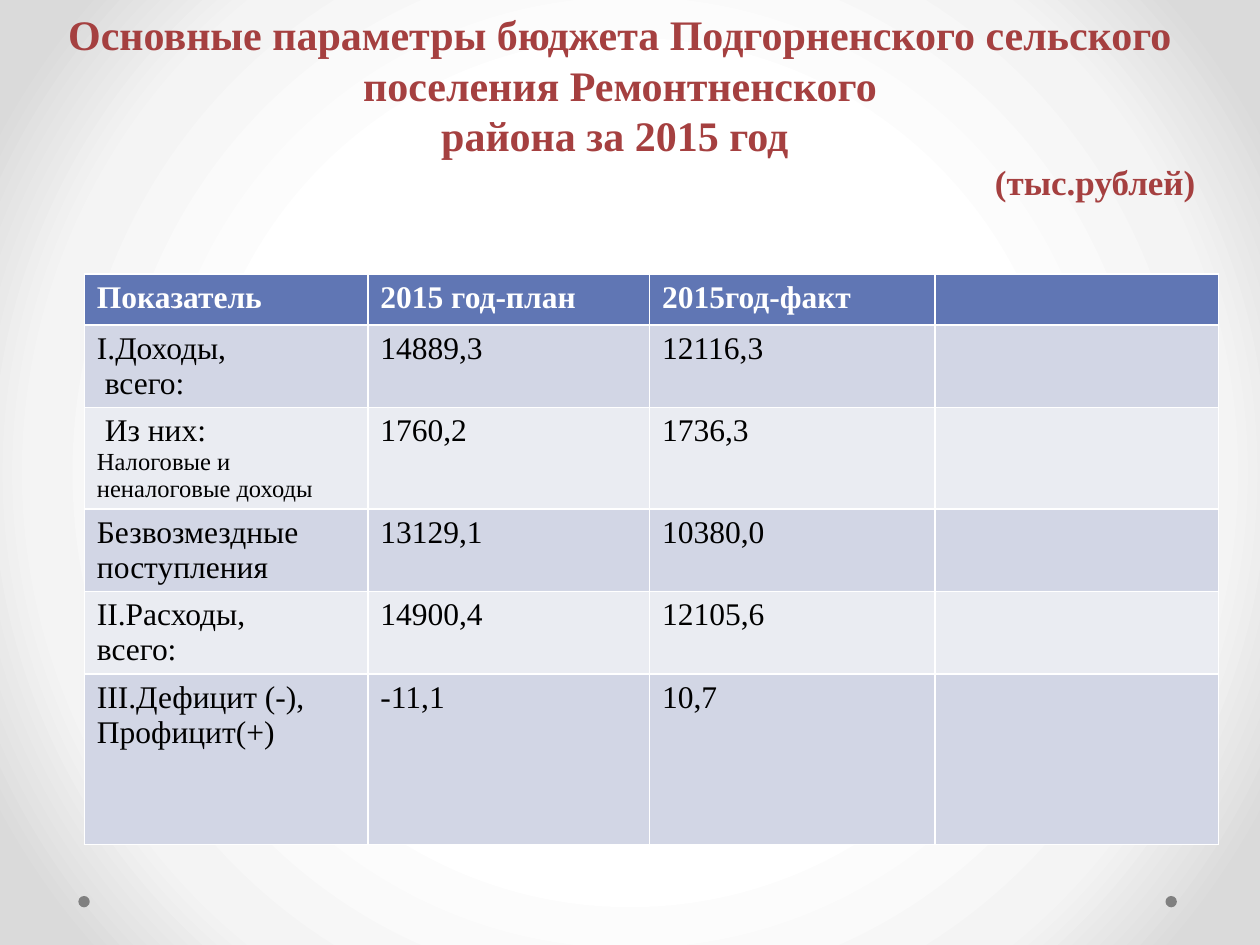
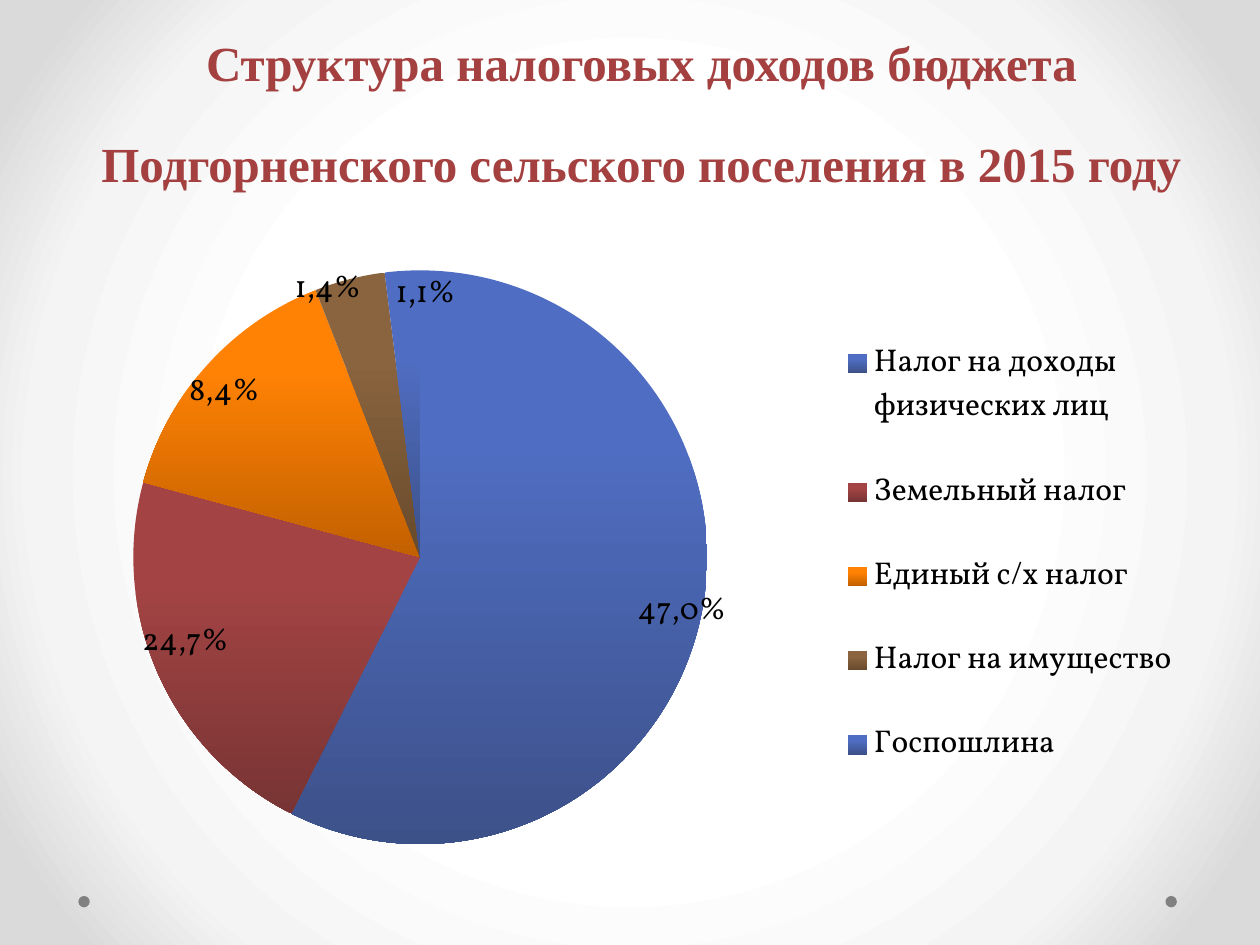
"""Build two slides on the 2015 budget: a parameter table and a tax revenue pie."""
from pptx import Presentation
from pptx.chart.data import CategoryChartData
from pptx.dml.color import RGBColor
from pptx.enum.chart import XL_CHART_TYPE, XL_LABEL_POSITION, XL_LEGEND_POSITION
from pptx.enum.shapes import MSO_SHAPE
from pptx.enum.text import MSO_ANCHOR, MSO_AUTO_SIZE, PP_ALIGN
from pptx.oxml import parse_xml
from pptx.oxml.ns import nsdecls, qn
from pptx.util import Pt

TITLE_FONT, CHART_FONT = "Times New Roman", "Vollkorn"
WHITE, BLACK, RED, GREY = "FFFFFF", "000000", "A54040", "808080"
HEADER, BAND_DARK, BAND_LIGHT = "6076B4", "D2D6E5", "EAECF2"
BACKGROUND_STOPS = [(50, "FFFFFF"), (76, "F4F4F4"), (92, "DADADA")]


def colour(value):
    return RGBColor.from_string(value)


def format_runs(para, size, value, bold=False, font=TITLE_FONT):
    for span in para.runs:
        span.font.name = font
        span.font.size = Pt(size)
        span.font.bold = bold
        span.font.color.rgb = colour(value)


deck = Presentation()
deck.slide_width, deck.slide_height = Pt(720), Pt(540)

master = deck.slide_master
master.background.fill.gradient()
linear = master.element.find(".//" + qn("a:gradFill"))
stops = "".join(
    f'<a:gs pos="{position * 1000}"><a:srgbClr val="{value}"/></a:gs>'
    for position, value in BACKGROUND_STOPS
)
radial = parse_xml(
    f'<a:gradFill {nsdecls("a")} rotWithShape="1"><a:gsLst>{stops}</a:gsLst>'
    '<a:path path="circle"><a:fillToRect l="50000" t="50000" r="50000" b="50000"/>'
    "</a:path></a:gradFill>"
)
linear.getparent().replace(linear, radial)

titles = [
    {
        "text": "Основные параметры бюджета Подгорненского сельского "
                "поселения Ремонтненского\vрайона за 2015 год \n(тыс.рублей)",
        "box": (18.3, 1.5, 672, 119),
        "anchor": MSO_ANCHOR.TOP,
        "lines": [(24, PP_ALIGN.CENTER), (20, PP_ALIGN.RIGHT)],
        "spacing": 1.0,
    },
    {
        "text": "Структура налоговых доходов бюджета "
                "Подгорненского сельского поселения в 2015 году",
        "box": (42.5, 53.2, 648, 60.5),
        "anchor": MSO_ANCHOR.BOTTOM,
        "lines": [(28, PP_ALIGN.CENTER)],
        "spacing": Pt(58),
    },
]
pages = []
for heading in titles:
    page = deck.slides.add_slide(deck.slide_layouts[5])
    pages.append(page)
    for left in (44.8, 666):
        dot = page.shapes.add_shape(MSO_SHAPE.OVAL, Pt(left), Pt(512), Pt(6.5), Pt(6.5))
        dot.shadow.inherit = False
        dot.fill.solid()
        dot.fill.fore_color.rgb = colour(GREY)
        dot.line.fill.background()
    title = page.shapes.title
    title.left, title.top, title.width, title.height = map(Pt, heading["box"])
    frame = title.text_frame
    frame.text = heading["text"]
    frame.auto_size = MSO_AUTO_SIZE.NONE
    frame.word_wrap = True
    frame.vertical_anchor = heading["anchor"]
    for para, (size, alignment) in zip(frame.paragraphs, heading["lines"]):
        para.alignment = alignment
        para.line_spacing = heading["spacing"]
        format_runs(para, size, RED, bold=True)

table_page, chart_page = pages

budget = [
    ("Показатель", "2015 год-план", "2015год-факт", ""),
    ("I.Доходы,\n всего:", "14889,3", "12116,3", ""),
    (" Из них:\nНалоговые и неналоговые доходы", "1760,2", "1736,3", ""),
    ("Безвозмездные поступления", "13129,1", "10380,0", ""),
    ("II.Расходы,\nвсего:", "14900,4", "12105,6", ""),
    ("III.Дефицит (-),\nПрофицит(+)", "-11,1", "10,7", ""),
]
table = table_page.shapes.add_table(
    len(budget), 4, Pt(48.2), Pt(156.5), Pt(648), Pt(245)
).table
for column, width in zip(table.columns, (162, 161, 163, 162)):
    column.width = Pt(width)
for row_number, values in enumerate(budget):
    table.rows[row_number].height = Pt(97.5 if row_number == len(budget) - 1 else 29.2)
    is_header = row_number == 0
    band = HEADER if is_header else BAND_DARK if row_number % 2 else BAND_LIGHT
    for column_number, value in enumerate(values):
        cell = table.cell(row_number, column_number)
        cell.fill.solid()
        cell.fill.fore_color.rgb = colour(band)
        cell.text_frame.text = value
        for para in cell.text_frame.paragraphs:
            size = 14 if para.text.startswith("Налоговые") else 18
            format_runs(para, size, WHITE if is_header else BLACK, bold=is_header)

taxes = [
    ("Налог на доходы физических лиц", 58, "47,0%", "4F6DC2", "3D5189"),
    ("Земельный налог", 22, "24,7%", "A34344", "783434"),
    ("Единый с/х налог", 15, "8,4%", "FF8204", "C26000"),
    ("Налог на имущество", 4, "1,4%", "8A643E", "684B2D"),
    ("Госпошлина", 2, "1,1%", "4F6DC2", "3D5189"),
]
label_shifts = [(0.03, 0.02), (-0.02, -0.01), (-0.02, 0), (-0.05, -0.03), (0.02, -0.01)]
chart_data = CategoryChartData()
chart_data.categories = [tax[0] for tax in taxes]
chart_data.add_series("Series 1", [tax[1] for tax in taxes])
chart = chart_page.shapes.add_chart(
    XL_CHART_TYPE.PIE, Pt(36), Pt(126), Pt(648), Pt(356.4), chart_data
).chart
chart.has_title = False
chart.font.name = CHART_FONT
chart.font.size = Pt(18)
chart.font.color.rgb = colour(BLACK)
chart.has_legend = True
chart.legend.position = XL_LEGEND_POSITION.RIGHT
chart.legend.include_in_layout = False

plot = chart.plots[0]
plot.vary_by_categories = True
for number, (name, share, label_text, top_shade, bottom_shade) in enumerate(taxes):
    point = plot.series[0].points[number]
    fill = point.format.fill
    fill.gradient()
    fill.gradient_angle = 270
    for stop, position, shade in zip(fill.gradient_stops, (0.3, 1), (top_shade, bottom_shade)):
        stop.position = position
        stop.color.rgb = colour(shade)
    label = point.data_label
    label.text_frame.text = label_text
    format_runs(label.text_frame.paragraphs[0], 18, BLACK, font=CHART_FONT)
    label.position = XL_LABEL_POSITION.INSIDE_END

edges = '<c:xMode val="edge"/><c:yMode val="edge"/>'
layouts = [
    (chart.element.find(".//" + qn("c:plotArea")), 0,
     f'<c:layoutTarget val="inner"/>{edges}<c:x val="0.03"/><c:y val="0.08"/>'
     '<c:w val="0.57"/><c:h val="0.92"/>'),
    (chart.element.find(".//" + qn("c:legend")), 1,
     f'{edges}<c:x val="0.68"/><c:y val="0.13"/><c:w val="0.31"/><c:h val="0.81"/>'),
]
for label, (across, down) in zip(chart.element.findall(".//" + qn("c:dLbl")), label_shifts):
    layouts.append((label, 1, f'<c:x val="{across}"/><c:y val="{down}"/>'))
for parent, position, settings in layouts:
    for old_layout in parent.findall(qn("c:layout")):
        parent.remove(old_layout)
    parent.insert(position, parse_xml(
        f'<c:layout {nsdecls("c")}><c:manualLayout>{settings}</c:manualLayout></c:layout>'
    ))

deck.save("out.pptx")
